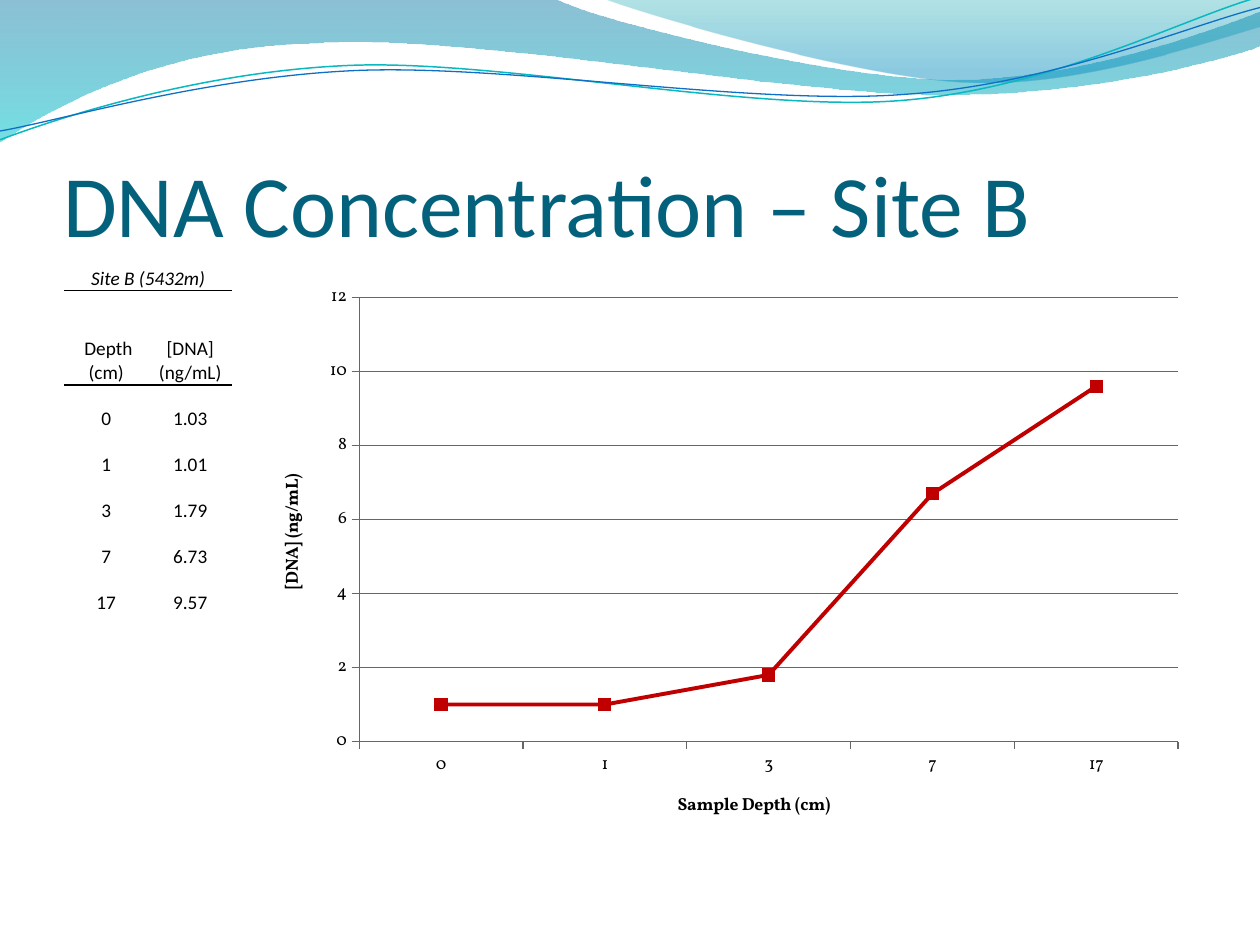
from lxml import etree
from pptx import Presentation
from pptx.chart.data import CategoryChartData
from pptx.dml.color import RGBColor
from pptx.enum import chart as ch, text
from pptx.oxml import parse_xml
from pptx.oxml.ns import nsdecls, qn
from pptx.util import Pt

HEX = {"ink": "000000", "title": "04617B", "line": "C00000", "axis": "666666",
       "teal": "0AB8BF", "blue": "0F6FC6"}
PLAIN = "{2D5ABB26-0587-4C30-8999-92F81FD0307C}"
DATA = [("0", "1.03"), ("1", "1.01"), ("3", "1.79"), ("7", "6.73"), ("17", "9.57")]

# Wave outlines in inches: a pair is a straight step, six numbers a Bezier curve
BACK = [(0, 0), (4.4, -0.01), (4.76, 0.17, 6.64, 0.63, 7.58, 0.63),
        (8.53, 0.63, 9.58, 0.26, 10, 0.09), (10.01, 0.36),
        (9.83, 0.44, 8.7, 0.76, 7.46, 0.75), (6.22, 0.75, 3.82, 0.28, 2.57, 0.34),
        (1.29, 0.36, 0.46, 0.83, -0.01, 1.13)]
FRONT = [(4.79, -0.01), (5.09, 0.11, 6.82, 0.62, 7.69, 0.65),
         (8.56, 0.69, 9.61, 0.32, 10, 0.21), (10, 0)]
UPPER = [(0, 1.11), (0.48, 0.93, 1.58, 0.57, 2.77, 0.52),
         (3.95, 0.47, 5.93, 0.89, 7.13, 0.8), (8.33, 0.71, 9.38, 0.15, 9.98, -0.02)]
LOWER = [(0, 1.04), (0.47, 0.96, 1.64, 0.61, 2.83, 0.56),
         (4.03, 0.51, 5.97, 0.84, 7.17, 0.75), (8.36, 0.67, 9.41, 0.21, 10, 0.06)]
# Gradient stops: position, colour, opacity in percent
FILLS = [(BACK, [(0, "0074A1", 45), (100, "00C6CF", 55)]),
         (FRONT, [(0, "00A1A9", 30), (80, "008BBF", 45)])]
LINES = [(UPPER, "teal", 0.85), (LOWER, "blue", 0.75)]


def rgb(key):
    return RGBColor.from_string(HEX[key])


def style(font, key="ink", **form):
    for name, val in form.items():
        setattr(font, name, val)
    font.color.rgb = rgb(key)


def outline(slide, steps, closed):
    """Build a freeform, then join each curve's three points into one Bezier."""
    pts = [(round(s[k] * 100), round(s[k + 1] * 100))
           for s in steps for k in range(0, len(s), 2)]
    pen = slide.shapes.build_freeform(*pts[0], scale=Pt(0.72))
    pen.add_line_segments(pts[1:], close=closed)
    shape = pen.convert_to_shape()
    shape.shadow.inherit = False
    shape.fill.background()
    legs = iter(list(shape._element.iter(qn("a:lnTo"))))
    for step in steps[1:]:
        leg = next(legs)
        if len(step) == 6:
            curve = etree.Element(qn("a:cubicBezTo"))
            leg.addprevious(curve)
            for part in (leg, next(legs), next(legs)):
                curve.append(part[0])
                part.getparent().remove(part)
    return shape


def add_waves(slide):
    for steps, stops in FILLS:
        shape = outline(slide, steps, True)
        shape.line.fill.background()
        marks = "".join(
            f'<a:gs pos="{pos * 1000}"><a:srgbClr val="{col}">'
            f'<a:alpha val="{op * 1000}"/></a:srgbClr></a:gs>' for pos, col, op in stops)
        grad = parse_xml(f'<a:gradFill {nsdecls("a")}><a:gsLst>{marks}</a:gsLst>'
                         '<a:lin ang="5400000" scaled="0"/></a:gradFill>')
        props = shape._element.spPr
        props.replace(props.find(qn("a:noFill")), grad)
    for steps, key, width in LINES:
        line = outline(slide, steps, False).line
        line.color.rgb = rgb(key)
        line.width = Pt(width)


def add_title(slide, box, words):
    title = slide.shapes.title
    title.left, title.top, title.width, title.height = map(Pt, box)
    frame = title.text_frame
    form = dict(text=words, margin_left=0, margin_right=0, margin_bottom=0,
                margin_top=Pt(3.6), vertical_anchor=text.MSO_ANCHOR.BOTTOM,
                auto_size=text.MSO_AUTO_SIZE.NONE, word_wrap=True)
    for name, val in form.items():
        setattr(frame, name, val)
    para = frame.paragraphs[0]
    para.alignment = text.PP_ALIGN.LEFT
    style(para.runs[0].font, "title", name="Calibri", size=Pt(50))


def rule(cell, widths):
    """Set all four edges; an edge without a width stays bare."""
    props = cell._tc.get_or_add_tcPr()
    for spot, side in enumerate("LRTB"):
        size, fill = "", "<a:noFill/>"
        if side in widths:
            size = f'w="{Pt(widths[side])}"'
            fill = f'<a:solidFill><a:srgbClr val="{HEX["ink"]}"/></a:solidFill>'
        props.insert(spot, parse_xml(
            f'<a:ln{side} {nsdecls("a")} {size}>{fill}</a:ln{side}>'))


def add_table(slide, box):
    rows = [("Site B (5432m)", ""), (" Depth (cm)", "[DNA] (ng/mL)"), *DATA, ("", "")]
    edges = {0: {"B": 0.5}, 1: {"T": 0.5, "B": 1}, 2: {"T": 1}}
    table = slide.shapes.add_table(len(rows), 2, *map(Pt, box)).table
    table.first_row = table.horz_banding = False
    table._tbl.tblPr.find(qn("a:tableStyleId")).text = PLAIN
    head = 54
    unit = (box[3] - head) / (len(rows) - 1)
    for i, row in enumerate(rows):
        table.rows[i].height = Pt(head if i == 1 else unit)
        for j, words in enumerate(row):
            cell = table.cell(i, j)
            cell.fill.background()
            cell.vertical_anchor = text.MSO_ANCHOR.BOTTOM
            for side in ("left", "right", "top", "bottom"):
                setattr(cell, f"margin_{side}", 0)
            rule(cell, edges.get(i, {}))
            if words:
                para = cell.text_frame.paragraphs[0]
                para.alignment = text.PP_ALIGN.CENTER
                run = para.add_run()
                run.text = words
                style(run.font, name="Calibri", size=Pt(11), italic=i == 0)
    table.cell(0, 0).merge(table.cell(0, 1))


def add_chart(slide, box, inner):
    data = CategoryChartData()
    data.categories = [depth for depth, _ in DATA]
    data.add_series("Series 1", [round(float(val), 1) for _, val in DATA])
    chart = slide.shapes.add_chart(
        ch.XL_CHART_TYPE.LINE_MARKERS, *map(Pt, box), data).chart
    chart.has_legend = chart.has_title = False
    style(chart.font, name="Vollkorn", size=Pt(10))

    # Axes
    for axis, words in ((chart.category_axis, "Sample Depth (cm)"),
                        (chart.value_axis, "[DNA] (ng/mL)")):
        axis.major_tick_mark = ch.XL_TICK_MARK.OUTSIDE
        axis.minor_tick_mark = ch.XL_TICK_MARK.NONE
        axis.format.line.color.rgb = rgb("axis")
        frame = axis.axis_title.text_frame
        frame.text = words
        style(frame.paragraphs[0].runs[0].font, name="Vollkorn", size=Pt(10), bold=True)
    scale = chart.value_axis
    scale.minimum_scale, scale.maximum_scale, scale.major_unit = 0, 12, 2
    scale.has_major_gridlines = True
    scale.major_gridlines.format.line.color.rgb = rgb("axis")

    # Series
    plot = chart.plots[0]
    plot.vary_by_categories = False
    series = plot.series[0]
    series.smooth = False
    series.format.line.color.rgb = rgb("line")
    series.format.line.width = Pt(2.25)
    mark = series.marker
    mark.style, mark.size = ch.XL_MARKER_STYLE.SQUARE, 7
    mark.format.fill.solid()
    mark.format.fill.fore_color.rgb = rgb("line")
    mark.format.line.color.rgb = rgb("line")

    # Inner plot area as shares of the chart box
    area = chart._chartSpace.chart.plotArea
    for old in area.findall(qn("c:layout")):
        area.remove(old)
    layout = etree.Element(qn("c:layout"))
    manual = etree.SubElement(layout, qn("c:manualLayout"))
    left, top, wide, high = inner
    for tag, val in dict(layoutTarget="inner", xMode="edge", yMode="edge",
                         x=left / box[2], y=top / box[3],
                         w=wide / box[2], h=high / box[3]).items():
        etree.SubElement(manual, qn(f"c:{tag}")).set("val", str(val))
    area.insert(0, layout)


def main():
    deck = Presentation()
    deck.slide_width, deck.slide_height = Pt(720), Pt(540)
    slide = deck.slides.add_slide(deck.slide_layouts[5])
    add_waves(slide)
    add_title(slide, (36, 55.5, 648, 90), "DNA Concentration – Site B")
    add_chart(slide, (144.75, 157, 539.25, 325.5), (60.5, 13, 468, 253.8))
    add_table(slide, (36.75, 139.7, 96, 238))
    deck.save("out.pptx")


if __name__ == "__main__":
    main()
